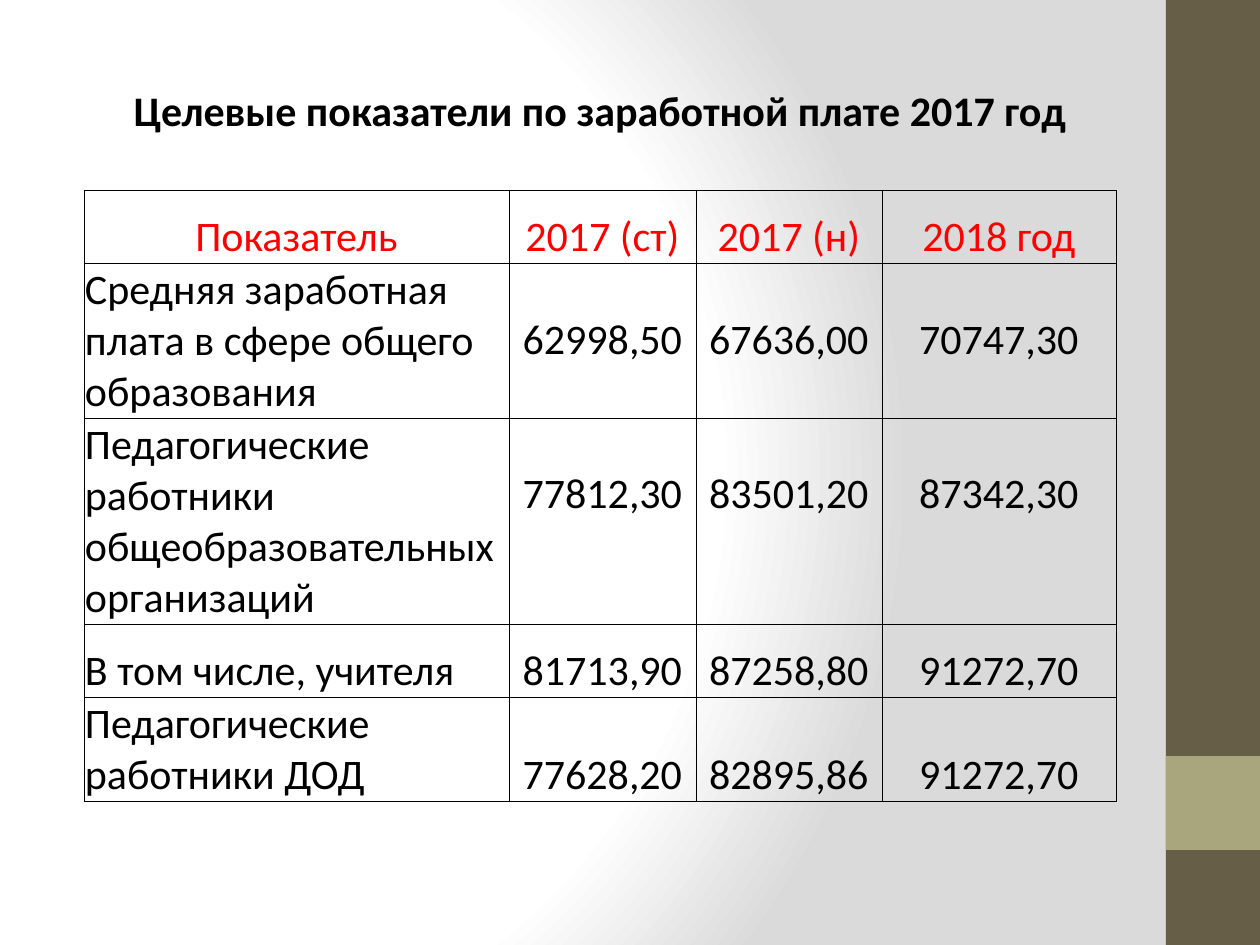
from lxml import etree
from pptx import Presentation
from pptx import util as u
from pptx.dml.color import RGBColor
from pptx.enum import shapes, text
from pptx.oxml import ns, parse_xml

BLACK = RGBColor(0x00, 0x00, 0x00)
WHITE = RGBColor(0xFF, 0xFF, 0xFF)
RED = RGBColor(0xFF, 0x00, 0x00)
GREY = RGBColor(0xDA, 0xDA, 0xDA)
BROWN = RGBColor(0x67, 0x5E, 0x47)
OLIVE = RGBColor(0xA9, 0xA5, 0x7C)

LINE = 52
COLUMNS = [425, 187, 186, 234]
HEIGHTS = [103, 73, 155, 206, 73, 104]
LIFTS = [LINE, 0, LINE, 2 * LINE, 0, 0]
HEADING = "Целевые показатели по заработной плате 2017 год"
ROWS = [
    ["Показатель", "2017 (ст)", "2017 (н)", "2018 год"],
    ["Средняя заработная плата в сфере общего образования", "62998,50", "67636,00", "70747,30"],
    ["Педагогические работники общеобразовательных организаций", "77812,30", "83501,20", "87342,30"],
    ["В том числе, учителя", "81713,90", "87258,80", "91272,70"],
    ["Педагогические работники ДОД", "77628,20", "82895,86", "91272,70"],
]


def px(count):
    return u.Emu(round(count * 914400 / 126))


class SalarySlide:
    font = {"name": "Calibri", "size": u.Pt(24)}
    insets = {"margin_left": px(1), "margin_right": px(1), "margin_top": px(1)}

    def __init__(self, deck):
        self.slide = deck.slides.add_slide(deck.slide_layouts[6])

    def apply(self, target, values):
        for name, value in values.items():
            setattr(target, name, value)

    def background(self, stops):
        self.slide.background.fill.solid()
        solid = next(self.slide.element.iter(ns.qn("a:solidFill")))
        marks = "".join(
            f'<a:gs pos="{place * 1000}"><a:srgbClr val="{color}"/></a:gs>'
            for place, color in stops
        )
        gradient = parse_xml(
            f'<a:gradFill {ns.nsdecls("a")} rotWithShape="1"><a:gsLst>{marks}</a:gsLst>'
            '<a:path path="circle"><a:fillToRect l="20000" t="50000" r="100000" b="50000"/>'
            '</a:path></a:gradFill>'
        )
        solid.getparent().replace(solid, gradient)

    def band(self, left, top, width, height, color):
        band = self.slide.shapes.add_shape(
            shapes.MSO_SHAPE.RECTANGLE, px(left), px(top), px(width), px(height)
        )
        band.shadow.inherit = False
        band.fill.solid()
        band.fill.fore_color.rgb = color
        band.line.fill.background()

    def table(self, left, top, columns, heights):
        frame = self.slide.shapes.add_table(
            len(heights), len(columns), px(left), px(top), px(sum(columns)), px(sum(heights))
        )
        salaries = frame.table
        for column, width in zip(salaries.columns, columns):
            column.width = px(width)
        for row, height in zip(salaries.rows, heights):
            row.height = px(height)
        return salaries

    def borders(self, cell, visible):
        properties = cell._tc.get_or_add_tcPr()
        for side in "LRTB":
            edge = etree.SubElement(properties, ns.qn(f"a:ln{side}"), w=str(u.Pt(0.5)))
            if side in visible:
                paint = etree.SubElement(edge, ns.qn("a:solidFill"))
                etree.SubElement(paint, ns.qn("a:srgbClr"), val=str(BLACK))
            else:
                etree.SubElement(edge, ns.qn("a:noFill"))

    def cell(self, cell, words, color=BLACK, bold=False, centred=True, lift=0, visible="LRTB"):
        self.borders(cell, visible)
        cell.fill.background()
        self.apply(cell, {
            **self.insets,
            "margin_bottom": px(lift),
            "vertical_anchor": text.MSO_ANCHOR.BOTTOM,
        })
        paragraph = cell.text_frame.paragraphs[0]
        paragraph.alignment = text.PP_ALIGN.CENTER if centred else text.PP_ALIGN.LEFT
        run = paragraph.add_run()
        run.text = words
        self.apply(run.font, {**self.font, "bold": bold})
        run.font.color.rgb = color


def main():
    deck = Presentation()
    deck.slide_width, deck.slide_height = px(1260), px(945)
    page = SalarySlide(deck)
    page.background([(0, WHITE), (75, WHITE), (100, GREY)])
    page.band(1166, 0, 94, 945, BROWN)
    page.band(1166, 756, 94, 94, OLIVE)

    salaries = page.table(84, 86, COLUMNS, HEIGHTS)
    heading = salaries.cell(0, 0)
    heading.merge(salaries.cell(0, len(COLUMNS) - 1))
    page.cell(heading, HEADING, bold=True, lift=LIFTS[0], visible="B")
    for row, entries in enumerate(ROWS, start=1):
        for column, words in enumerate(entries):
            is_label = row > 1 and column == 0
            page.cell(
                salaries.cell(row, column),
                words,
                color=RED if row == 1 else BLACK,
                centred=not is_label,
                lift=0 if is_label else LIFTS[row],
            )
    deck.save("out.pptx")


if __name__ == "__main__":
    main()
